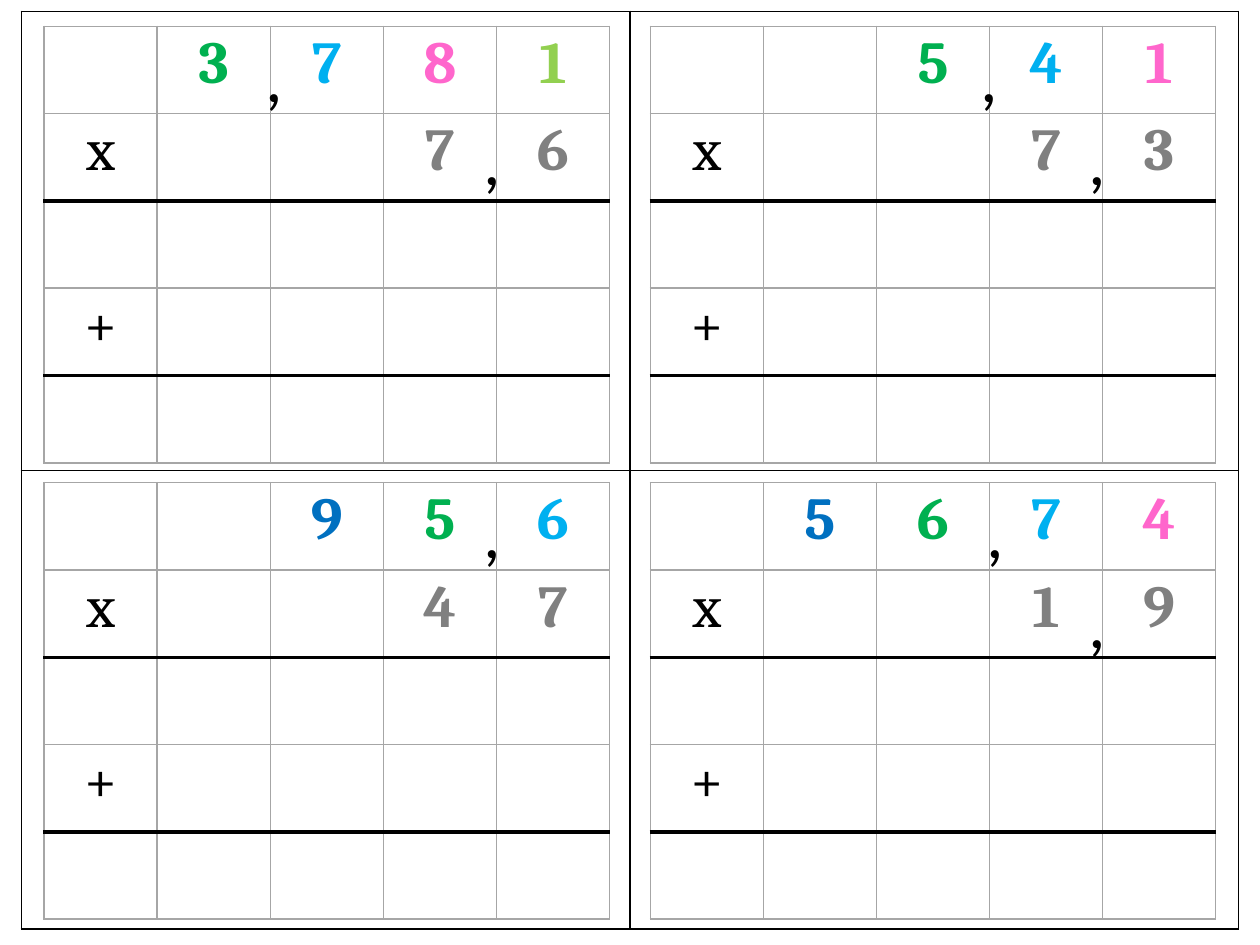
from lxml import etree
from pptx import Presentation
from pptx.dml.color import RGBColor
from pptx.enum.text import MSO_ANCHOR, PP_ALIGN
from pptx.oxml.ns import qn
from pptx.util import Cm, Pt

CENTER = PP_ALIGN.CENTER
TOP = MSO_ANCHOR.TOP

BLACK = RGBColor(0x00, 0x00, 0x00)
WHITE = RGBColor(0xFF, 0xFF, 0xFF)
GRID = RGBColor(0xA6, 0xA6, 0xA6)
GREY = RGBColor(0x80, 0x80, 0x80)
TENS = RGBColor(0x00, 0x70, 0xC0)
UNITS = RGBColor(0x00, 0xB0, 0x50)
TENTHS = RGBColor(0x00, 0xB0, 0xF0)
HUNDREDTHS = RGBColor(0xFF, 0x66, 0xCC)
THOUSANDTHS = RGBColor(0x92, 0xD0, 0x50)
PLACES = [TENS, UNITS, TENTHS, HUNDREDTHS, THOUSANDTHS]

SIZE = 5                       # rows and columns of a calculation grid
COL_W, ROW_H = 2.28, 1.76
RULED_ROWS = (1, 3)            # rows with a thick line below
LEFT, RIGHT, UPPER, LOWER = 0.89, 13.11, 0.53, 9.73

# left, top, top number, multiplier, column of the units digit,
# commas as offsets from the grid
CALCULATIONS = [
    (LEFT, UPPER, "3781", "76", 1, [(4.22, 0), (8.61, 1.68)]),
    (RIGHT, UPPER, "541", "73", 2, [(6.4, 0), (8.59, 1.68)]),
    (LEFT, LOWER, "956", "47", 3, [(8.61, 0)]),
    (RIGHT, LOWER, "5674", "19", 2, [(6.52, 0), (8.59, 1.8)]),
]


def set_borders(cell, sides):
    """Draw the borders L, R, T and B, each given as (colour, points)."""
    tc_pr = cell._tc.get_or_add_tcPr()
    for i, (side, (color, width)) in enumerate(sides.items()):
        ln = etree.Element(qn(f"a:ln{side}"), w=str(Pt(width)))
        fill = etree.SubElement(ln, qn("a:solidFill"))
        etree.SubElement(fill, qn("a:srgbClr"), val=str(color))
        tc_pr.insert(i, ln)


def add_grid(slide, left, top, count, col_w, row_h, color, ruled=()):
    """Add a square white table with thick lines below the ruled rows."""
    frame = slide.shapes.add_table(count, count, Cm(left), Cm(top),
                                   Cm(count * col_w), Cm(count * row_h))
    table = frame.table
    table.first_row = table.horz_banding = False
    for col in table.columns:
        col.width = Cm(col_w)
    thin, thick = (color, 1), (BLACK, 2.25)
    for r, row in enumerate(table.rows):
        row.height = Cm(row_h)
        for cell in row.cells:
            cell.fill.solid()
            cell.fill.fore_color.rgb = WHITE
            set_borders(cell, {
                "L": thin, "R": thin,
                "T": thick if r - 1 in ruled else thin,
                "B": thick if r in ruled else thin,
            })
    return table


def write_cell(cell, text, color, bold):
    cell.margin_top = Cm(0.07)
    cell.vertical_anchor = TOP
    p = cell.text_frame.paragraphs[0]
    p.text = text
    p.alignment = CENTER
    font = p.runs[0].font
    font.name, font.size, font.bold = "Cambria", Pt(34), bold
    font.color.rgb = color


def add_comma(slide, left, top):
    tf = slide.shapes.add_textbox(Cm(left), Cm(top), Cm(0.79), Cm(1.96)).text_frame
    p = tf.paragraphs[0]
    p.text = ","
    font = p.runs[0].font
    font.name, font.size = "Calibri", Pt(40)
    font.color.rgb = BLACK


def add_calculation(slide, left, top, number, multiplier, units_col):
    table = add_grid(slide, left, top, SIZE, COL_W, ROW_H, GRID, RULED_ROWS)
    # Top number, right-aligned and coloured by place value
    for c, digit in enumerate(number, SIZE - len(number)):
        write_cell(table.cell(0, c), digit, PLACES[c - units_col + 1], True)
    # Multiplier
    for c, digit in enumerate(multiplier, SIZE - len(multiplier)):
        write_cell(table.cell(1, c), digit, GREY, True)
    # Operators
    for r, sign in zip(RULED_ROWS, "x+"):
        write_cell(table.cell(r, 0), sign, BLACK, False)


def main():
    prs = Presentation()
    prs.slide_width, prs.slide_height = Cm(25.4), Cm(19.05)
    slide = prs.slides.add_slide(prs.slide_layouts[6])

    # Outer frame of four cards
    add_grid(slide, 0.43, 0.23, 2, 12.27, 9.25, BLACK)

    # Calculations
    for left, top, number, multiplier, units_col, _ in CALCULATIONS:
        add_calculation(slide, left, top, number, multiplier, units_col)

    # Decimal commas
    for left, top, *_, commas in reversed(CALCULATIONS):
        for dx, dy in reversed(commas):
            add_comma(slide, left + dx, top + dy)

    prs.save("out.pptx")


if __name__ == "__main__":
    main()
